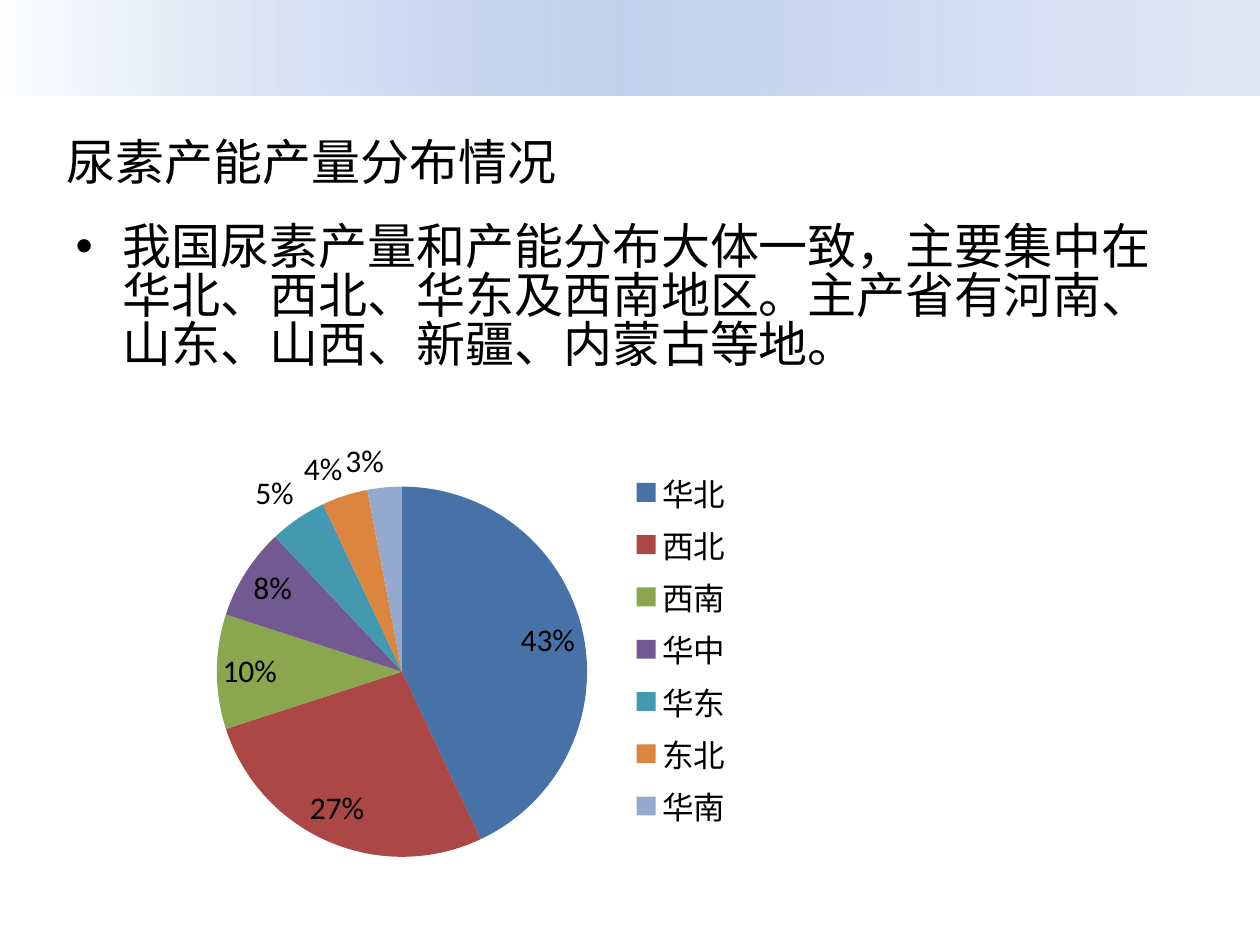
from lxml import etree
from pptx import Presentation
from pptx.chart.data import CategoryChartData
from pptx.dml.color import RGBColor
from pptx.enum.chart import XL_CHART_TYPE, XL_LABEL_POSITION, XL_LEGEND_POSITION
from pptx.enum.shapes import MSO_SHAPE
from pptx.enum.text import MSO_ANCHOR, MSO_AUTO_SIZE, PP_ALIGN
from pptx.oxml import parse_xml
from pptx.oxml.ns import nsdecls, qn
from pptx.util import Pt

PIE = XL_CHART_TYPE.PIE
BEST_FIT = XL_LABEL_POSITION.BEST_FIT
LEGEND_RIGHT = XL_LEGEND_POSITION.RIGHT
RECTANGLE = MSO_SHAPE.RECTANGLE
TOP = MSO_ANCHOR.TOP
MIDDLE = MSO_ANCHOR.MIDDLE
NO_FIT = MSO_AUTO_SIZE.NONE
LEFT = PP_ALIGN.LEFT

TEXT_FONT = "Noto Sans CJK JP"
CHART_FONT = "Calibri"
BLACK = "000000"
BAND_STOPS = [(0, "9AB5E4", 0), (50, "C2D1ED", 100), (100, "E1E8F5", 100)]
REGIONS = [
    ("华北", 0.43, "4672A8"),
    ("西北", 0.27, "AB4744"),
    ("西南", 0.10, "8AA64F"),
    ("华中", 0.08, "725990"),
    ("华东", 0.05, "4299B0"),
    ("东北", 0.04, "DC853E"),
    ("华南", 0.03, "93A9CE"),
]


def color(value):
    return RGBColor.from_string(value)


def add_band(page, left, top, width, height):
    band = page.shapes.add_shape(RECTANGLE, Pt(left), Pt(top), Pt(width), Pt(height))
    band.shadow.inherit = False
    band.line.fill.background()
    band.fill.gradient()
    band.fill.gradient_angle = 0
    stops = band._element.spPr.find(qn("a:gradFill")).find(qn("a:gsLst"))
    for stop in list(stops):
        stops.remove(stop)
    for position, value, opacity in BAND_STOPS:
        stops.append(parse_xml(
            f'<a:gs {nsdecls("a")} pos="{position * 1000}"><a:srgbClr val="{value}">'
            f'<a:alpha val="{opacity * 1000}"/></a:srgbClr></a:gs>'
        ))


def fill_placeholder(box, left, top, width, height, text, anchor):
    box.left, box.top, box.width, box.height = Pt(left), Pt(top), Pt(width), Pt(height)
    frame = box.text_frame
    frame.word_wrap = True
    frame.auto_size = NO_FIT
    frame.vertical_anchor = anchor
    para = frame.paragraphs[0]
    para.alignment = LEFT
    para.space_before = Pt(0)
    span = para.add_run()
    span.text = text
    span.font.size = Pt(28)
    span.font.name = TEXT_FONT
    span.font.color.rgb = color(BLACK)
    east_asian = etree.SubElement(span.font._element, qn("a:ea"))
    east_asian.set("typeface", TEXT_FONT)
    return para


def add_bullet(para, indent):
    properties = para._p.get_or_add_pPr()
    properties.set("marL", str(Pt(indent)))
    properties.set("indent", str(-Pt(indent)))
    bullet_font = etree.SubElement(properties, qn("a:buFont"))
    bullet_font.set("typeface", "Arial")
    bullet = etree.SubElement(properties, qn("a:buChar"))
    bullet.set("char", "•")


def set_plot_area(chart, x, y, width, height):
    plot_area = chart._chartSpace.chart.plotArea
    for layout in plot_area.findall(qn("c:layout")):
        plot_area.remove(layout)
    plot_area.insert(0, parse_xml(
        f'<c:layout {nsdecls("c")}><c:manualLayout><c:layoutTarget val="inner"/>'
        f'<c:xMode val="edge"/><c:yMode val="edge"/><c:x val="{x}"/><c:y val="{y}"/>'
        f'<c:w val="{width}"/><c:h val="{height}"/></c:manualLayout></c:layout>'
    ))


def add_pie(page, left, top, width, height):
    data = CategoryChartData(number_format="0%")
    data.categories = [name for name, share, value in REGIONS]
    data.add_series("Series 1", [share for name, share, value in REGIONS])
    chart = page.shapes.add_chart(
        PIE, Pt(left), Pt(top), Pt(width), Pt(height), data
    ).chart
    chart.has_title = False
    chart.font.size = Pt(18)
    chart.font.name = CHART_FONT
    chart.font.color.rgb = color(BLACK)
    chart.has_legend = True
    chart.legend.position = LEGEND_RIGHT
    chart.legend.include_in_layout = False
    plot = chart.plots[0]
    plot.vary_by_categories = True
    for index, (name, share, value) in enumerate(REGIONS):
        fill = plot.series[0].points[index].format.fill
        fill.solid()
        fill.fore_color.rgb = color(value)
    plot.has_data_labels = True
    labels = plot.data_labels
    labels.show_value = True
    labels.show_percentage = False
    labels.number_format = "0%"
    labels.number_format_is_linked = False
    labels.position = BEST_FIT
    set_plot_area(chart, 0.16, 0.14, 0.59, 0.82)


def main():
    deck = Presentation()
    deck.slide_width, deck.slide_height = Pt(720), Pt(540)
    page = deck.slides.add_slide(deck.slide_layouts[1])
    add_band(page, 0, 0, 720, 54.7)
    title, body = page.placeholders
    fill_placeholder(title, 31, 66.2, 648, 51, "尿素产能产量分布情况", MIDDLE)
    para = fill_placeholder(
        body, 36, 125.5, 648, 377,
        "我国尿素产量和产能分布大体一致，主要集中在华北、西北、华东及西南地区。"
        "主产省有河南、山东、山西、新疆、内蒙古等地。", TOP,
    )
    para.line_spacing = 0.83
    add_bullet(para, 27)
    add_pie(page, 65.5, 242, 361, 258)
    deck.save("out.pptx")


if __name__ == "__main__":
    main()
